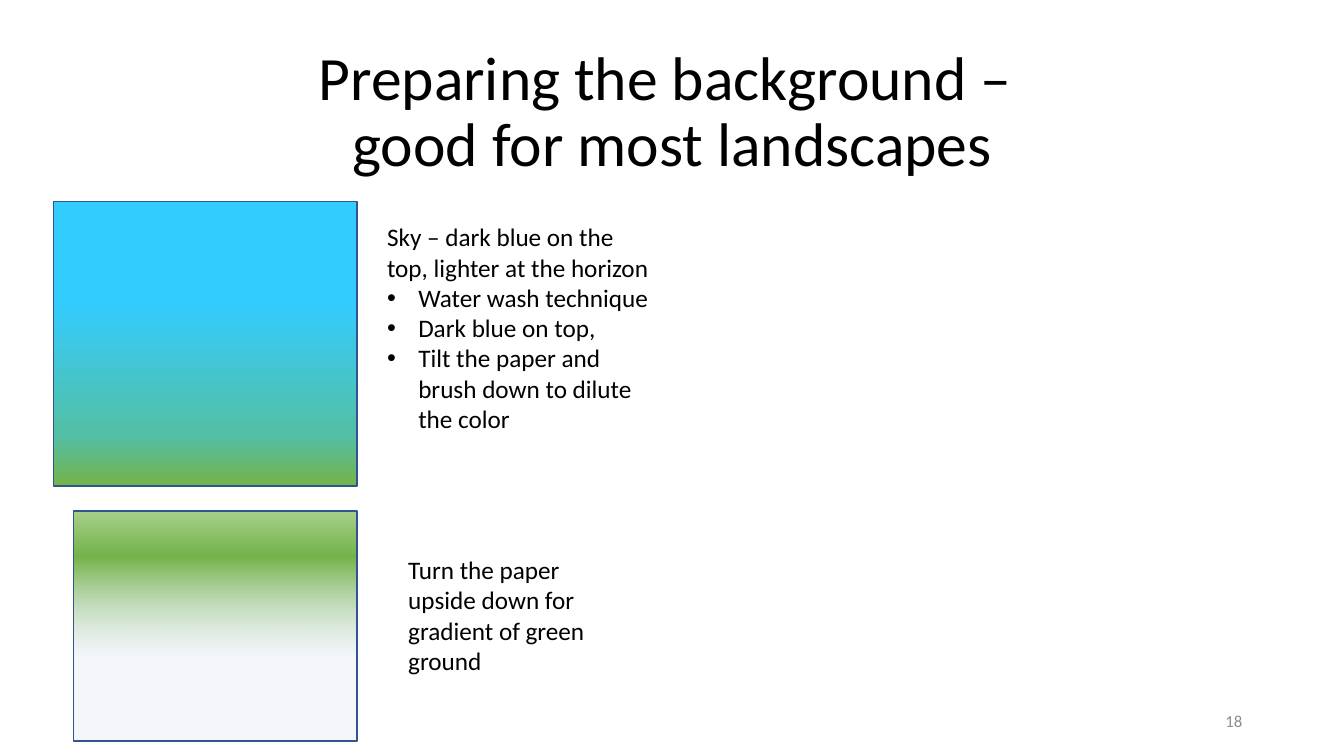
from lxml import etree
from pptx import Presentation
from pptx.dml.color import RGBColor
from pptx.enum import shapes, text
from pptx.oxml.ns import qn
from pptx.util import Inches, Pt

# Content: boxes are left, top, width, height in inches
TITLE = "Preparing the background – \ngood for most landscapes"
SKY_INTRO = "Sky – dark blue on the top, lighter at the horizon"
SKY_STEPS = [
    "Water wash technique",
    "Dark blue on top,",
    "Tilt the paper and brush down to dilute the color",
]
GROUND_NOTE = "Turn the paper upside down for gradient of green ground"
PAGE_NUMBER = "18"

THEME = {
    "font": "Calibri",
    "ink": "000000",
    "muted": "8C8C8C",
    "outline": "325491",
    "title": 44,
    "body": 18,
    "small": 12,
    "indent": 0.31,
}

# Gradient stops: position %, colour, opacity %
WASHES = [
    {"box": (0.73, 5.07, 2.81, 2.28), "rotation": 0,
     "stops": [(36, "DFE7F5", 34), (80, "74B349", 100), (100, "A9D18E", 100)]},
    {"box": (0.53, 2, 3.01, 2.82), "rotation": 180,
     "stops": [(35, "33CCFF", 100), (83, "54BFA2", 100),
               (100, "74B349", 100), (100, "A9D18E", 100)]},
]

LEFT, CENTER, RIGHT = text.PP_ALIGN.LEFT, text.PP_ALIGN.CENTER, text.PP_ALIGN.RIGHT
TOP, MIDDLE = text.MSO_ANCHOR.TOP, text.MSO_ANCHOR.MIDDLE
# Each line is (words, bulleted)
WORDS = [
    {"box": (0.92, 0.4, 11.5, 1.45), "lines": [(TITLE, False)], "size": "title",
     "color": "ink", "anchor": MIDDLE,
     "format": {"alignment": CENTER, "line_spacing": 0.9}},
    {"box": (9.42, 6.95, 3, 0.4), "lines": [(PAGE_NUMBER, False)], "size": "small",
     "color": "muted", "anchor": MIDDLE, "format": {"alignment": RIGHT}},
    {"box": (3.95, 5.45, 2.09, 1.31), "lines": [(GROUND_NOTE, False)], "size": "body",
     "color": "ink", "anchor": TOP, "format": {"alignment": LEFT}},
    {"box": (3.74, 2.15, 2.81, 2.22),
     "lines": [(SKY_INTRO, False)] + [(step, True) for step in SKY_STEPS],
     "size": "body", "color": "ink", "anchor": TOP, "format": {"alignment": LEFT}},
]


def inches(box):
    return [Inches(length) for length in box]


def add_bullet(paragraph):
    properties = paragraph._p.get_or_add_pPr()
    indent = Inches(THEME["indent"])
    properties.set("marL", str(indent))
    properties.set("indent", str(-indent))
    etree.SubElement(properties, qn("a:buFont")).set("typeface", "Arial")
    etree.SubElement(properties, qn("a:buChar")).set("char", "•")


def add_words(slide, words):
    box = slide.shapes.add_textbox(*inches(words["box"]))
    frame = box.text_frame
    frame.word_wrap = True
    frame.vertical_anchor = words["anchor"]
    for number, (line, bulleted) in enumerate(words["lines"]):
        paragraph = frame.add_paragraph() if number else frame.paragraphs[0]
        paragraph.text = line
        for name, value in words["format"].items():
            setattr(paragraph, name, value)
        if bulleted:
            add_bullet(paragraph)
        for run in paragraph.runs:
            run.font.name = THEME["font"]
            run.font.size = Pt(THEME[words["size"]])
            run.font.color.rgb = RGBColor.from_string(THEME[words["color"]])


def add_wash(slide, wash):
    paper = slide.shapes.add_shape(shapes.MSO_SHAPE.RECTANGLE, *inches(wash["box"]))
    paper.shadow.inherit = False
    paper.rotation = wash["rotation"]
    paper.line.color.rgb = RGBColor.from_string(THEME["outline"])
    paper.line.width = Pt(1)
    paper.fill.gradient()
    paper.fill.gradient_angle = 90

    # Replace the default stops
    stop_list = paper._element.find(".//" + qn("a:gsLst"))
    for default_stop in list(stop_list):
        stop_list.remove(default_stop)
    for position, color, opacity in wash["stops"]:
        stop = etree.SubElement(stop_list, qn("a:gs"))
        stop.set("pos", str(position * 1000))
        shade = etree.SubElement(stop, qn("a:srgbClr"))
        shade.set("val", color)
        if opacity < 100:
            etree.SubElement(shade, qn("a:alpha")).set("val", str(opacity * 1000))


def main():
    deck = Presentation()
    deck.slide_width, deck.slide_height = Inches(13.33), Inches(7.5)
    slide = deck.slides.add_slide(deck.slide_layouts[6])
    for wash in WASHES:
        add_wash(slide, wash)
    for words in WORDS:
        add_words(slide, words)
    deck.save("out.pptx")


if __name__ == "__main__":
    main()
